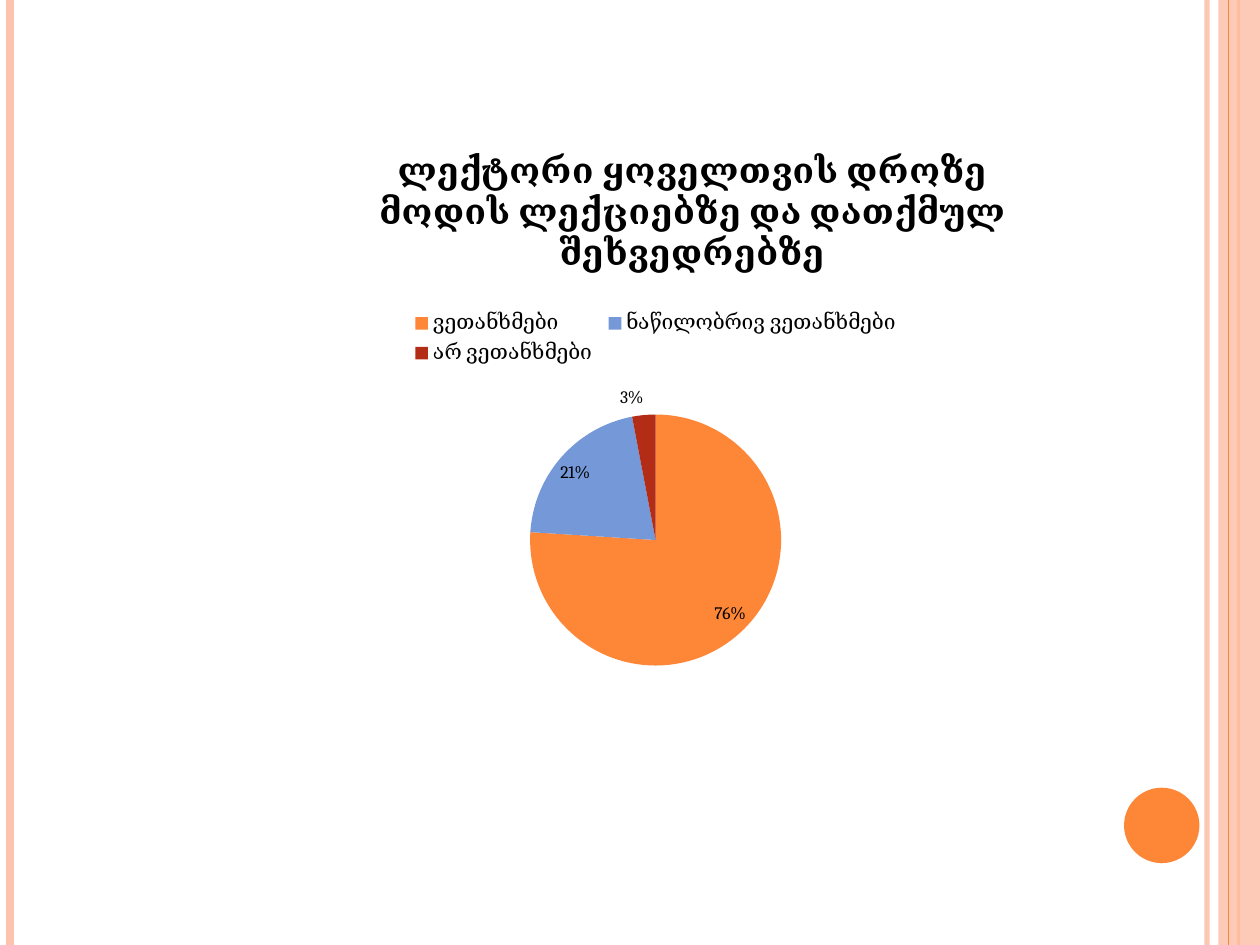
"""Builds a slide with a pie chart of student answers about lecturer punctuality."""
from lxml import etree
from pptx import Presentation
from pptx.chart.data import CategoryChartData
from pptx.dml.color import RGBColor
from pptx.enum.chart import XL_CHART_TYPE, XL_LABEL_POSITION, XL_LEGEND_POSITION
from pptx.enum.shapes import MSO_CONNECTOR, MSO_SHAPE
from pptx.oxml.ns import qn
from pptx.util import Cm, Pt

PIE = XL_CHART_TYPE.PIE
BEST_FIT = XL_LABEL_POSITION.BEST_FIT
TOP = XL_LEGEND_POSITION.TOP
STRAIGHT = MSO_CONNECTOR.STRAIGHT
RECTANGLE, OVAL = MSO_SHAPE.RECTANGLE, MSO_SHAPE.OVAL

ORANGE = RGBColor(0xFE, 0x86, 0x37)
PEACH = RGBColor(0xFE, 0xC3, 0xAE)
BLUE = RGBColor(0x75, 0x98, 0xD9)
RED = RGBColor(0xB3, 0x2C, 0x16)
BLACK = RGBColor(0, 0, 0)
FONT = "Cambria"
WIDTH, HEIGHT = 25.4, 19.05

QUESTION = "ლექტორი ყოველთვის დროზე მოდის ლექციებზე და დათქმულ შეხვედრებზე"
ANSWERS = [
    ("ვეთანხმები", 76, ORANGE),
    ("ნაწილობრივ ვეთანხმები", 21, BLUE),
    ("არ ვეთანხმები", 3, RED),
]
STRIPES_BEHIND_BAND = [(24.33, PEACH, 3, 93), (0.2, PEACH, 4.5, 100), (24.97, ORANGE, 1.5, 100)]
STRIPE_OVER_BAND = (24.77, ORANGE, 0.75, 100)
BAND_LEFT = 24.56
DISC = (22.66, 15.88, 1.52, 1.52)
CHART = (4.88, 2.75, 16.51, 11)
TITLE_PLACE = {"x": 0.16, "y": 0.01}
LEGEND_PLACE = {"x": 0.2, "y": 0.31, "w": 0.61, "h": 0.12}
PIE_PLACE = {"x": 0.35, "y": 0.51, "w": 0.31, "h": 0.46}


def set_opacity(fill_owner, percent):
    colour = next(fill_owner.iter(qn("a:srgbClr")))
    etree.SubElement(colour, qn("a:alpha"), val=str(percent * 1000))


def add_stripe(slide, x, colour, weight, opacity):
    stripe = slide.shapes.add_connector(STRAIGHT, Cm(x), 0, Cm(x), Cm(HEIGHT))
    stripe.line.color.rgb = colour
    stripe.line.width = Pt(weight)
    properties = stripe._element.spPr
    if opacity < 100:
        set_opacity(properties, opacity)
    etree.SubElement(properties, qn("a:effectLst"))


def add_plain_shape(slide, kind, place, colour):
    shape = slide.shapes.add_shape(kind, *map(Cm, place))
    shape.fill.solid()
    shape.fill.fore_color.rgb = colour
    shape.line.fill.background()
    shape.shadow.inherit = False
    return shape


def set_layout(part, index, place, inner=False):
    for old in part.findall(qn("c:layout")):
        part.remove(old)
    layout = etree.Element(qn("c:layout"))
    manual = etree.SubElement(layout, qn("c:manualLayout"))
    if inner:
        etree.SubElement(manual, qn("c:layoutTarget"), val="inner")
    for side in "xy":
        etree.SubElement(manual, qn(f"c:{side}Mode"), val="edge")
    for side, share in place.items():
        etree.SubElement(manual, qn(f"c:{side}"), val=str(share))
    part.insert(index, layout)


def style_font(font, size, bold=False):
    font.name, font.size, font.bold = FONT, Pt(size), bold
    font.color.rgb = BLACK


def add_answer_chart(slide):
    answers = CategoryChartData()
    answers.categories = [answer for answer, _, _ in ANSWERS]
    answers.add_series("Series 1", [share for _, share, _ in ANSWERS])
    chart = slide.shapes.add_chart(PIE, *map(Cm, CHART), answers).chart
    style_font(chart.font, 10)

    chart.has_title = True
    question = chart.chart_title.text_frame
    question.text = QUESTION
    style_font(question.paragraphs[0].runs[0].font, 20, True)
    set_layout(chart.chart_title._element, 1, TITLE_PLACE)

    chart.has_legend = True
    chart.legend.position = TOP
    chart.legend.include_in_layout = False
    style_font(chart.legend.font, 12)
    set_layout(chart.legend._element, 1, LEGEND_PLACE)

    pie = chart.plots[0]
    pie.vary_by_categories = True
    for index, (_, _, colour) in enumerate(ANSWERS):
        slice_fill = pie.series[0].points[index].format.fill
        slice_fill.solid()
        slice_fill.fore_color.rgb = colour
    pie.has_data_labels = True
    labels = pie.data_labels
    labels.show_value = False
    labels.show_percentage = True
    labels.number_format = "0%"
    labels.number_format_is_linked = False
    labels.position = BEST_FIT
    style_font(labels.font, 10)
    set_layout(pie._element.getparent(), 0, PIE_PLACE, inner=True)


def main():
    deck = Presentation()
    deck.slide_width, deck.slide_height = Cm(WIDTH), Cm(HEIGHT)
    slide = deck.slides.add_slide(deck.slide_layouts[6])
    for stripe in STRIPES_BEHIND_BAND:
        add_stripe(slide, *stripe)
    band = add_plain_shape(slide, RECTANGLE, (BAND_LEFT, 0, WIDTH - BAND_LEFT, HEIGHT), PEACH)
    set_opacity(band._element.spPr, 87)
    add_stripe(slide, *STRIPE_OVER_BAND)
    add_plain_shape(slide, OVAL, DISC, ORANGE)
    add_answer_chart(slide)
    deck.save("out.pptx")


if __name__ == "__main__":
    main()
